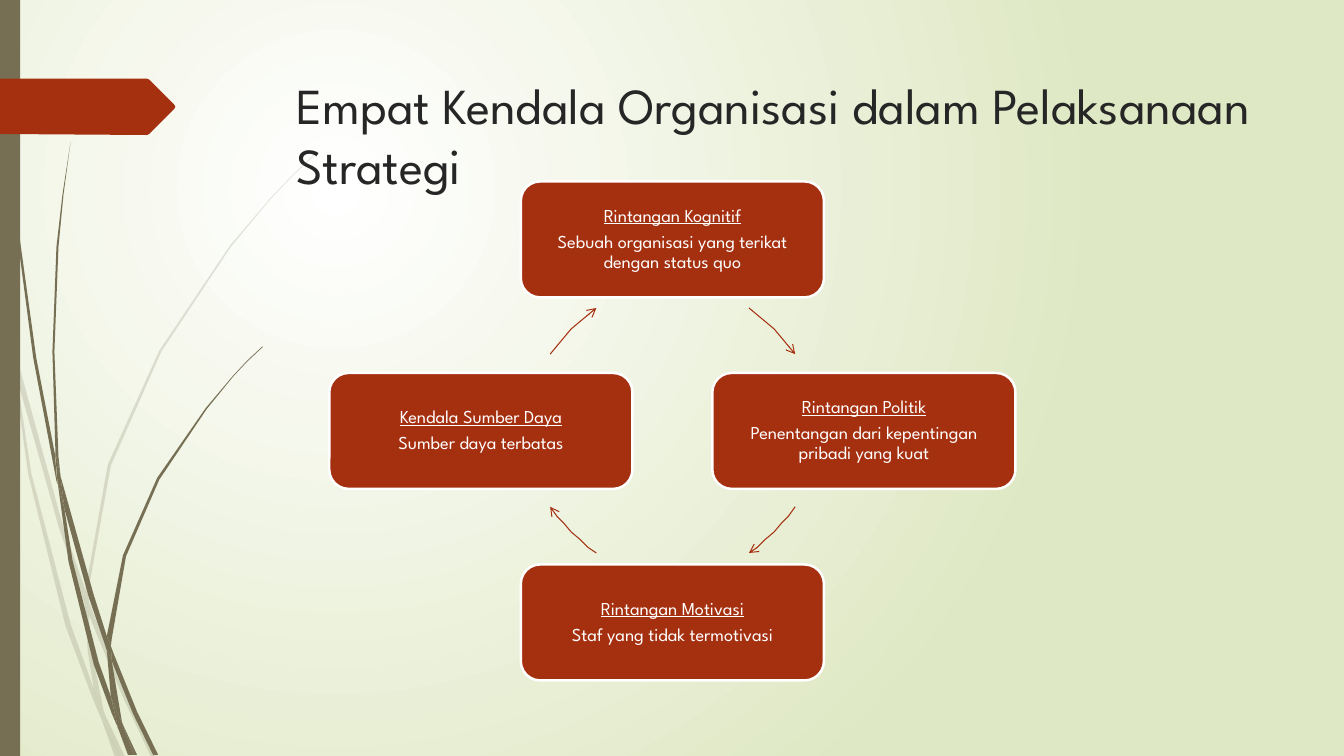
from dataclasses import dataclass
from math import cos, radians, sin

from lxml import etree
from pptx import Presentation
from pptx.dml.color import RGBColor
from pptx.enum.shapes import MSO_SHAPE
from pptx.enum.text import MSO_ANCHOR, MSO_AUTO_SIZE, PP_ALIGN
from pptx.oxml.ns import qn
from pptx.util import Pt

RECTANGLE, ROUNDED = MSO_SHAPE.RECTANGLE, MSO_SHAPE.ROUNDED_RECTANGLE
TOP, MIDDLE = MSO_ANCHOR.TOP, MSO_ANCHOR.MIDDLE
LEFT, CENTER = PP_ALIGN.LEFT, PP_ALIGN.CENTER
NO_AUTOFIT = MSO_AUTO_SIZE.NONE
TITLE_ONLY = 5


@dataclass(frozen=True)
class Theme:
    """Colours, font and type sizes of the slide."""
    font: str = "League Spartan"
    title_size: float = 36
    card_size: float = 13
    ink: str = "262626"
    white: str = "FFFFFF"
    meadow: str = "DFE8C4"
    stem: str = "766F54"
    rust: str = "A53010"


THEME = Theme()
CENTER_X, CENTER_Y, RADIUS = 480.3, 307.8, 136.8
CARD_WIDTH, CARD_HEIGHT = 216.5, 82.8
ARROW_SHIFT, ARROW_SPREAD, ARROW_STEPS = 34.5, 9.8, 6
OUTLINE_UNIT = Pt(0.72)

TITLE = "Empat Kendala Organisasi dalam Pelaksanaan Strategi"
CARDS = [
    ("Rintangan Kognitif", "Sebuah organisasi yang terikat dengan status quo"),
    ("Rintangan Politik", "Penentangan dari kepentingan pribadi yang kuat"),
    ("Rintangan Motivasi", "Staf yang tidak termotivasi"),
    ("Kendala Sumber Daya", "Sumber daya terbatas"),
]

PALE_WISPS = [
    [(11, 350), (9, 322), (0, 282), (0, 299), (10, 344)],
    [(58, 522), (84, 599), (85, 586), (62, 520), (14, 345), (17, 376)],
    [(92, 607), (88, 596), (88, 610), (123, 694), (150, 751), (155, 751), (127, 692)],
    [(119, 751), (124, 751), (105, 711)],
    [(93, 683), (70, 619), (31, 469), (17, 376), (11, 350), (28, 470), (65, 621),
     (92, 693), (101, 714), (99, 707)],
    [(84, 599), (87, 646), (93, 683), (96, 692), (105, 711), (103, 706), (91, 646),
     (88, 610), (88, 608)],
    [(88, 584), (110, 462), (160, 349), (229, 245), (268, 198), (290, 175), (312, 154),
     (312, 153), (289, 175), (268, 197), (228, 244), (158, 348), (107, 461), (85, 584),
     (85, 586), (88, 596)],
    [(101, 714), (114, 751), (119, 751)],
    [(88, 608), (88, 610), (88, 596), (85, 586), (84, 599)],
    [(96, 692), (93, 683), (99, 707), (101, 714), (119, 751), (105, 711)],
]
DARK_WISPS = [
    [(7, 110), (17, 233), (33, 355), (56, 477), (57, 481), (55, 457), (55, 453),
     (36, 355), (19, 232), (8, 109), (5, 48), (4, 0), (3, 0), (4, 48)],
    [(88, 592), (106, 645), (106, 633), (106, 631), (93, 590), (60, 472), (64, 505)],
    [(113, 649), (110, 641), (111, 656), (132, 708), (152, 749), (157, 749), (136, 706)],
    [(110, 691), (98, 657), (72, 556), (64, 505), (57, 477), (68, 557), (93, 659),
     (111, 708), (117, 722), (116, 717)],
    [(60, 472), (58, 453), (54, 349), (58, 245), (63, 193), (70, 141), (62, 193),
     (56, 245), (52, 349), (55, 449)],
    [(133, 749), (136, 749), (122, 719)],
    [(57, 477), (64, 505), (60, 472), (55, 449), (55, 453)],
    [(111, 633), (125, 552), (158, 476), (205, 406), (231, 374), (245, 359), (261, 344),
     (260, 344), (245, 358), (231, 373), (204, 405), (156, 474), (122, 551), (106, 631),
     (110, 641)],
    [(117, 722), (127, 749), (131, 749)],
    [(106, 645), (110, 691), (116, 706), (122, 719), (121, 716), (111, 656), (109, 651)],
    [(106, 645), (109, 651), (111, 656), (110, 641), (106, 631), (106, 633)],
    [(116, 706), (110, 691), (116, 717), (117, 722), (130, 749), (133, 749), (122, 719)],
]
TAG = [(173, 108), (148, 133), (146, 134), (0, 133), (0, 78), (146, 78), (148, 79),
       (173, 104), (174, 106)]


def set_values(target, **values):
    """Set each named format value on the target."""
    for name, value in values.items():
        setattr(target, name, value)


def paint(shape, fill=None, line=None, width=0):
    """Give a shape its fill and line, without a shadow."""
    shape.shadow.inherit = False
    for part, color in ((shape.fill, fill), (shape.line.fill, line)):
        if color:
            part.solid()
            part.fore_color.rgb = RGBColor.from_string(color)
        else:
            part.background()
    if line:
        shape.line.width = Pt(width)


def write(paragraph, text, size, color, align, **font_values):
    """Write one styled run into a paragraph."""
    paragraph.alignment = align
    run = paragraph.add_run()
    run.text = text
    set_values(run.font, name=THEME.font, size=Pt(size), **font_values)
    run.font.color.rgb = RGBColor.from_string(color)


def add_background(slide):
    """Spread a round gradient from the upper left."""
    fill = slide.background.fill
    fill.gradient()
    for stop, color in zip(fill.gradient_stops, (THEME.white, THEME.meadow)):
        stop.color.rgb = RGBColor.from_string(color)
    gradient = next(slide.element.iter(qn("a:gradFill")))
    gradient.remove(gradient.find(qn("a:lin")))
    circle = etree.SubElement(gradient, qn("a:path"), path="circle")
    etree.SubElement(circle, qn("a:fillToRect"), l="50000", t="50000", r="100000", b="100000")


def add_outline(slide, points, color, opacity=100):
    """Draw a closed filled outline."""
    builder = slide.shapes.build_freeform(*points[0], scale=OUTLINE_UNIT)
    builder.add_line_segments(points[1:], close=True)
    shape = builder.convert_to_shape()
    paint(shape, color)
    if opacity < 100:
        tint = next(shape.element.spPr.iter(qn("a:srgbClr")))
        etree.SubElement(tint, qn("a:alpha"), val=str(opacity * 1000))


def add_title(slide):
    """Place and format the title."""
    title = slide.shapes.title
    set_values(title, left=Pt(204.5), top=Pt(49), width=Pt(702), height=Pt(100.8))
    frame = title.text_frame
    set_values(frame, word_wrap=True, vertical_anchor=TOP, auto_size=NO_AUTOFIT)
    write(frame.paragraphs[0], TITLE, THEME.title_size, THEME.ink, LEFT)


def add_card(slide, angle, heading, detail):
    """Place a card on the cycle at the given angle."""
    left = CENTER_X + RADIUS * cos(radians(angle)) - CARD_WIDTH / 2
    top = CENTER_Y + RADIUS * sin(radians(angle)) - CARD_HEIGHT / 2
    card = slide.shapes.add_shape(ROUNDED, Pt(left), Pt(top), Pt(CARD_WIDTH), Pt(CARD_HEIGHT))
    paint(card, THEME.rust, THEME.white, 1.75)
    frame = card.text_frame
    margins = dict.fromkeys(("margin_left", "margin_top", "margin_right", "margin_bottom"), Pt(3.6))
    set_values(frame, word_wrap=True, vertical_anchor=MIDDLE, **margins)
    for paragraph, text, underline in (
        (frame.paragraphs[0], heading, True),
        (frame.add_paragraph(), detail, False),
    ):
        set_values(paragraph, line_spacing=0.9, space_after=Pt(4.5))
        write(paragraph, text, THEME.card_size, THEME.white, CENTER, underline=underline)


def add_arc_arrow(slide, angle):
    """Draw a clockwise arc arrow centred on the given angle."""
    middle_x = CENTER_X - ARROW_SHIFT * cos(radians(angle))
    middle_y = CENTER_Y - ARROW_SHIFT * sin(radians(angle))
    turns = [radians(angle + ARROW_SPREAD * (2 * step / ARROW_STEPS - 1))
             for step in range(ARROW_STEPS + 1)]
    points = [(middle_x + RADIUS * cos(turn), middle_y + RADIUS * sin(turn)) for turn in turns]
    builder = slide.shapes.build_freeform(*points[0], scale=Pt(1))
    builder.add_line_segments(points[1:], close=False)
    arrow = builder.convert_to_shape()
    paint(arrow, line=THEME.rust, width=0.75)
    etree.SubElement(arrow.element.spPr.find(qn("a:ln")), qn("a:tailEnd"), type="arrow")


def main():
    """Build the slide and save it."""
    presentation = Presentation()
    set_values(presentation, slide_width=Pt(960), slide_height=Pt(540))
    slide = presentation.slides.add_slide(presentation.slide_layouts[TITLE_ONLY])
    add_background(slide)
    for points in PALE_WISPS:
        add_outline(slide, points, THEME.stem, 20)
    for points in DARK_WISPS:
        add_outline(slide, points, THEME.stem)
    bar = slide.shapes.add_shape(RECTANGLE, Pt(0), Pt(0), Pt(14.4), Pt(540))
    paint(bar, THEME.stem)
    add_outline(slide, TAG, THEME.rust)
    add_title(slide)
    for index, (heading, detail) in enumerate(CARDS):
        angle = 90 * index - 90
        add_card(slide, angle, heading, detail)
        add_arc_arrow(slide, angle + 45)
    presentation.save("out.pptx")


if __name__ == "__main__":
    main()
